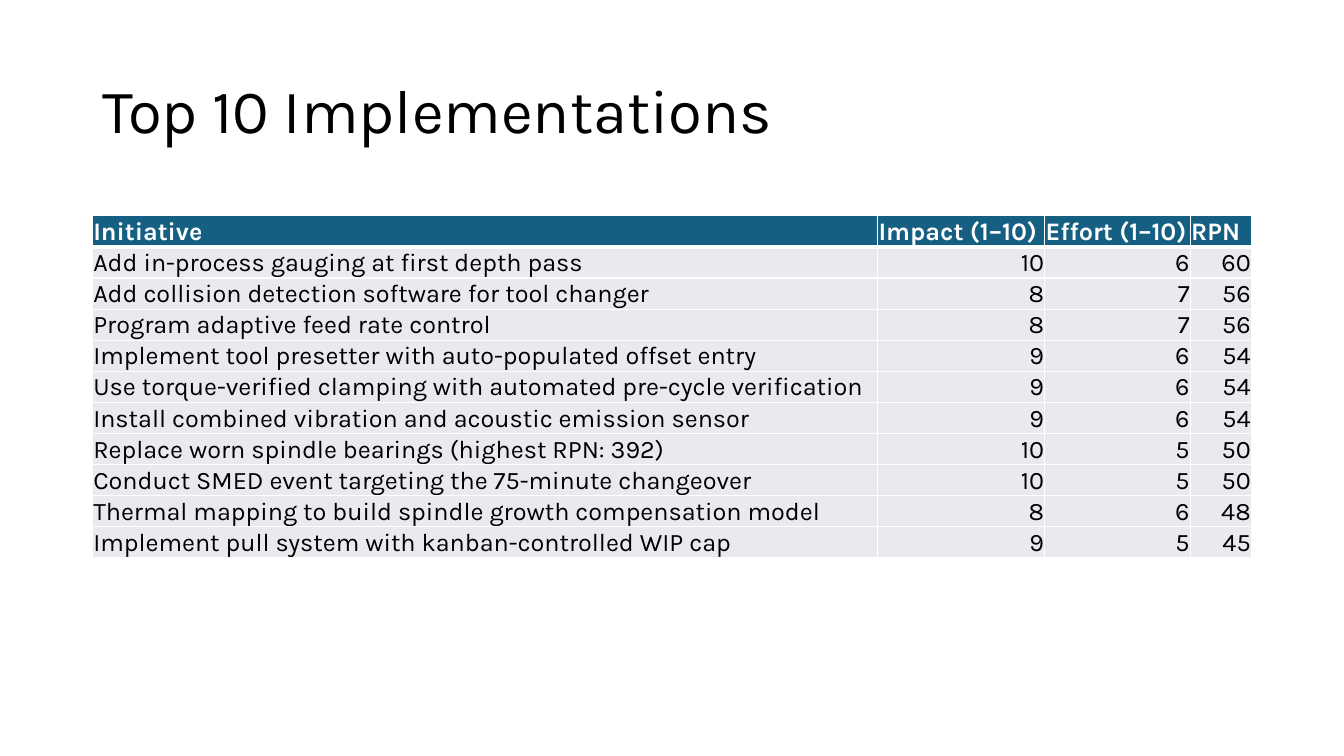
from lxml.etree import SubElement
from pptx import Presentation
from pptx.dml.color import RGBColor
from pptx.enum.text import MSO_ANCHOR, PP_ALIGN
from pptx.oxml.ns import qn
from pptx.util import Cm, Pt


def style(p, size, color, bold=False):
    for name, value in {"name": "Karla", "size": Pt(size), "bold": bold}.items():
        setattr(p.font, name, value)
    p.font.color.rgb = RGBColor.from_string(color)


def border(cell, side, width):
    ln = SubElement(cell._tc.get_or_add_tcPr(), qn(f"a:ln{side}"), w=str(Pt(width)))
    fill = SubElement(ln, qn("a:solidFill"))
    SubElement(fill, qn("a:srgbClr"), val="FFFFFF")


prs = Presentation()
prs.slide_width, prs.slide_height = Cm(33.87), Cm(19.05)
s = prs.slides.add_slide(prs.slide_layouts[6])

# Title
tf = s.shapes.add_textbox(Cm(2.33), Cm(1.01), Cm(29.21), Cm(3.68)).text_frame
tf.word_wrap = True
tf.vertical_anchor = MSO_ANCHOR.MIDDLE
p = tf.paragraphs[0]
p.text = "Top 10 Implementations"
p.line_spacing = 0.9
style(p, 44, "000000")

# Initiatives with impact and effort; RPN is their product
initiatives = [
    ("Add in-process gauging at first depth pass", 10, 6),
    ("Add collision detection software for tool changer", 8, 7),
    ("Program adaptive feed rate control", 8, 7),
    ("Implement tool presetter with auto-populated offset entry", 9, 6),
    ("Use torque-verified clamping with automated pre-cycle verification", 9, 6),
    ("Install combined vibration and acoustic emission sensor", 9, 6),
    ("Replace worn spindle bearings (highest RPN: 392)", 10, 5),
    ("Conduct SMED event targeting the 75-minute changeover", 10, 5),
    ("Thermal mapping to build spindle growth compensation model", 8, 6),
    ("Implement pull system with kanban-controlled WIP cap", 9, 5),
]
rows = [("Initiative", "Impact (1–10)", "Effort (1–10)", "RPN")]
rows += [(name, impact, effort, impact * effort) for name, impact, effort in initiatives]

# Table
widths = [19.79, 4.21, 3.67, 1.54]
row_height = 0.53
table = s.shapes.add_table(len(rows), len(widths), Cm(2.33), Cm(5.44),
                           Cm(sum(widths)), Cm(row_height * len(rows))).table
for column, width in zip(table.columns, widths):
    column.width = Cm(width)

margins = {"margin_left": 0.02, "margin_top": 0.02, "margin_right": 0.02, "margin_bottom": 0}
for i, row in enumerate(rows):
    header = i == 0
    table.rows[i].height = Cm(row_height)
    for j, value in enumerate(row):
        cell = table.cell(i, j)
        for name, length in margins.items():
            setattr(cell, name, Cm(length))
        cell.vertical_anchor = MSO_ANCHOR.BOTTOM
        for side in "LRTB":
            thick = (header and side == "B") or (i == 1 and side == "T")
            border(cell, side, 3 if thick else 1)
        cell.fill.solid()
        cell.fill.fore_color.rgb = RGBColor.from_string("156082" if header else "E8EAED")
        p = cell.text_frame.paragraphs[0]
        p.text = str(value)
        p.alignment = PP_ALIGN.LEFT if header or j == 0 else PP_ALIGN.RIGHT
        style(p, 18, "FFFFFF" if header else "000000", header)

prs.save("out.pptx")
